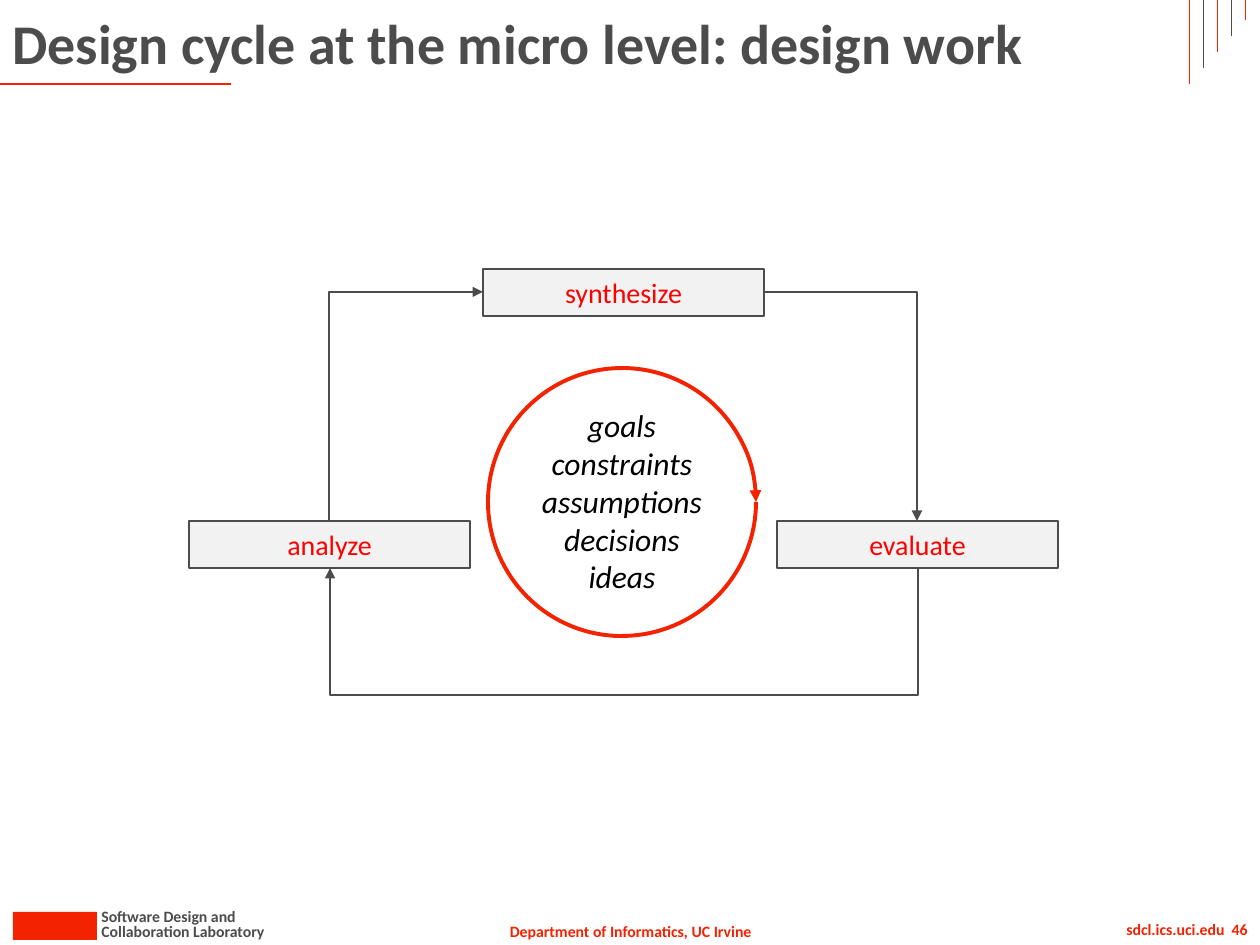
"""Build the slide on the design cycle at the micro level."""
from dataclasses import dataclass

from lxml import etree
from pptx import Presentation
from pptx.dml.color import RGBColor
from pptx.enum.shapes import MSO_CONNECTOR, MSO_SHAPE
from pptx.enum.text import MSO_ANCHOR, PP_ALIGN
from pptx.oxml.ns import qn
from pptx.util import Pt

SCALE = 914400 / 126
RECT, ARC = MSO_SHAPE.RECTANGLE, MSO_SHAPE.ARC
LINE, ELBOW = MSO_CONNECTOR.STRAIGHT, MSO_CONNECTOR.ELBOW
LEFT, MID, RIGHT = PP_ALIGN.LEFT, PP_ALIGN.CENTER, PP_ALIGN.RIGHT
TOP, HALF = MSO_ANCHOR.TOP, MSO_ANCHOR.MIDDLE
HUES = {"red": "F32200", "text": "FF0000", "dark": "4C4C4C",
        "pale": "F2F2F2", "black": "000000"}
BOLD = {"name": "Calibri", "bold": True}
PLAIN = {"name": "Calibri"}
SLANT = {"name": "Calibri", "italic": True}
BADGE = (13, 912, 84, 28)


@dataclass
class Label:
    area: tuple
    text: str
    size: int
    hue: str
    font: dict
    align: int = LEFT
    anchor: int = TOP
    wrap: bool = True


@dataclass
class Rule:
    start: tuple
    end: tuple
    hue: str
    width: float


@dataclass
class Step:
    text: str
    left: int
    top: int


@dataclass
class Bend:
    start: tuple
    end: tuple
    source: str
    out: int
    target: str
    into: int
    preset: str = "bentConnector2"
    turn: int = 0
    flips: tuple = ()
    drop: int = 0


@dataclass
class Curve:
    turn: int = 0
    flips: tuple = ()
    head: bool = False


LABELS = [
    Label((495, 916, 271, 32), "Department of Informatics, UC Irvine", 9, "red", BOLD, MID, wrap=False),
    Label((89, 916, 193, 32), "Collaboration Laboratory", 9, "dark", BOLD, wrap=False),
    Label((89, 901, 163, 32), "Software Design and", 9, "dark", BOLD, wrap=False),
    Label((988, 914, 272, 32), "sdcl.ics.uci.edu  46", 9, "red", BOLD, RIGHT),
    Label((0, 0, 1134, 84), "Design cycle at the micro level: design work", 32, "dark", BOLD, anchor=HALF),
    Label((528, 400, 188, 204), "goals\nconstraints\nassumptions\ndecisions\nideas", 18, "black", SLANT, MID,
          wrap=False),
]
RULES = [Rule((0, 84), (231, 84), "red", 1.5)] + [
    Rule((1189 + 14 * i, 84 - 16 * i), (1189 + 14 * i, 0), ("red", "dark")[i % 2], 0.5)
    for i in range(5)]
STEPS = [Step("analyze", 189, 521), Step("evaluate", 777, 521), Step("synthesize", 483, 269)]
BENDS = [
    Bend((329, 521), (483, 292), "analyze", 0, "synthesize", 1, turn=90, flips=("flipH", "flipV")),
    Bend((764, 292), (917, 521), "synthesize", 3, "evaluate", 0),
    Bend((918, 567), (330, 568), "evaluate", 2, "analyze", 2, "bentConnector3", 90, drop=129),
]
CURVES = [Curve(head=True), Curve(flips=("flipV",)), Curve(270), Curve(90, ("flipV",))]


def px(*nums: float) -> list:
    """Turn px into EMU."""
    return [round(n * SCALE) for n in nums]


def paint(line, hue: str, width: float, head: bool = False) -> None:
    """Style a line and give it an arrowhead if asked."""
    line.color.rgb = RGBColor.from_string(HUES[hue])
    line.width = Pt(width)
    if head:
        etree.SubElement(line._get_or_add_ln(), qn("a:tailEnd"), type="triangle")


def orient(item, turn: int, flips: tuple) -> None:
    """Turn and flip an item."""
    frame = item._element.spPr.find(qn("a:xfrm"))
    if turn:
        frame.set("rot", str(turn * 60000))
    for side in ("flipH", "flipV"):
        frame.attrib.pop(side, None)
    for side in flips:
        frame.set(side, "1")


def write(frame, spec: Label) -> None:
    """Fill a text frame from its label."""
    form = {"text": spec.text, "word_wrap": spec.wrap, "vertical_anchor": spec.anchor}
    for key, val in form.items():
        setattr(frame, key, val)
    for para in frame.paragraphs:
        para.alignment = spec.align
        font = para.runs[0].font
        for key, val in {**spec.font, "size": Pt(spec.size)}.items():
            setattr(font, key, val)
        font.color.rgb = RGBColor.from_string(HUES[spec.hue])


def join(shapes, kind: int, start: tuple, end: tuple):
    """Add a connector that has no shadow."""
    link = shapes.add_connector(kind, *px(*start, *end))
    etree.SubElement(link._element.spPr, qn("a:effectLst"))
    return link


def draw_rule(shapes, rule: Rule) -> None:
    """Draw a straight rule."""
    paint(join(shapes, LINE, rule.start, rule.end).line, rule.hue, rule.width)


def draw_box(shapes, area: tuple, hue: str):
    """Draw a filled box with no outline."""
    box = shapes.add_shape(RECT, *px(*area))
    box.shadow.inherit = False
    box.fill.solid()
    box.fill.fore_color.rgb = RGBColor.from_string(HUES[hue])
    box.line.fill.background()
    return box


def draw_step(shapes, step: Step):
    """Draw a step of the cycle."""
    area = (step.left, step.top, 281, 47)
    box = draw_box(shapes, area, "pale")
    paint(box.line, "dark", 1.5)
    write(box.text_frame, Label(area, step.text, 16, "text", PLAIN, MID, HALF))
    return box


def draw_bend(shapes, bend: Bend, boxes: dict) -> None:
    """Draw a bent arrow from one step to the next."""
    link = join(shapes, ELBOW, bend.start, bend.end)
    link.begin_connect(boxes[bend.source], bend.out)
    link.end_connect(boxes[bend.target], bend.into)
    (x, y), (u, v) = bend.start, bend.end
    wide, high = abs(u - x), abs(v - y)
    if bend.turn:
        wide, high = high, wide
    area = px((x + u - wide) / 2, (y + v - high) / 2, wide, high)
    for key, val in zip(("left", "top", "width", "height"), area):
        setattr(link, key, val)
    orient(link, bend.turn, bend.flips)
    shape = link._element.spPr.find(qn("a:prstGeom"))
    shape.set("prst", bend.preset)
    if bend.drop:
        ratio = round(bend.drop / wide * 100000)
        etree.SubElement(shape.find(qn("a:avLst")), qn("a:gd"), name="adj1", fmla=f"val {ratio}")
    paint(link.line, "dark", 1.5, True)


def draw_curve(shapes, curve: Curve) -> None:
    """Draw a quarter of the ring."""
    arc = shapes.add_shape(ARC, *px(488, 368, 268, 268))
    arc.shadow.inherit = False
    arc.fill.background()
    paint(arc.line, "red", 2.25, curve.head)
    orient(arc, curve.turn, curve.flips)


def main() -> None:
    """Build and save the slide."""
    deck = Presentation()
    deck.slide_width, deck.slide_height = px(1260, 945)
    shapes = deck.slides.add_slide(deck.slide_layouts[6]).shapes
    draw_box(shapes, BADGE, "red")
    for rule in RULES:
        draw_rule(shapes, rule)
    boxes = {step.text: draw_step(shapes, step) for step in STEPS}
    for bend in BENDS:
        draw_bend(shapes, bend, boxes)
    ring = shapes.add_group_shape().shapes
    for curve in CURVES:
        draw_curve(ring, curve)
    for label in LABELS:
        write(shapes.add_textbox(*px(*label.area)).text_frame, label)
    deck.save("out.pptx")


if __name__ == "__main__":
    main()
